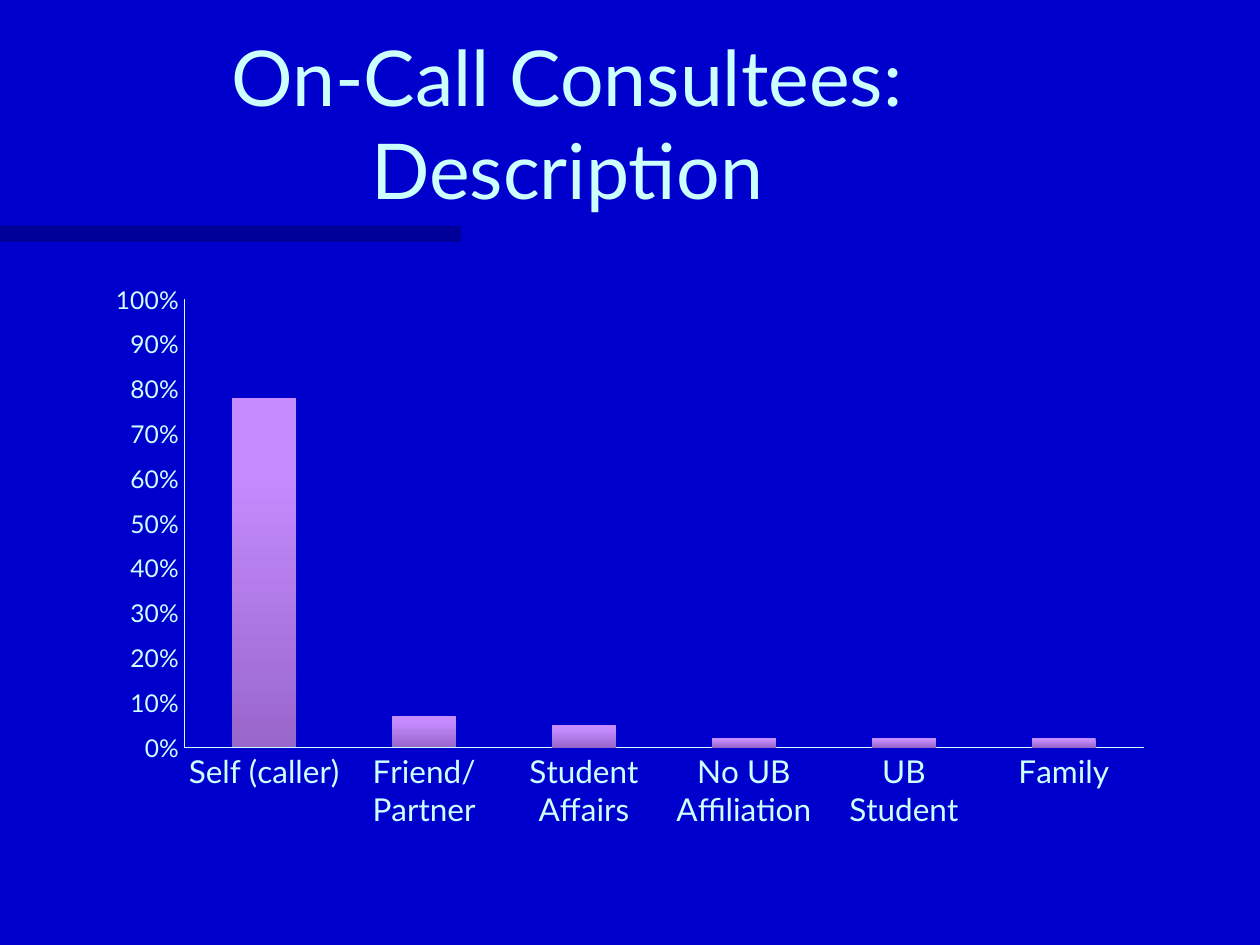
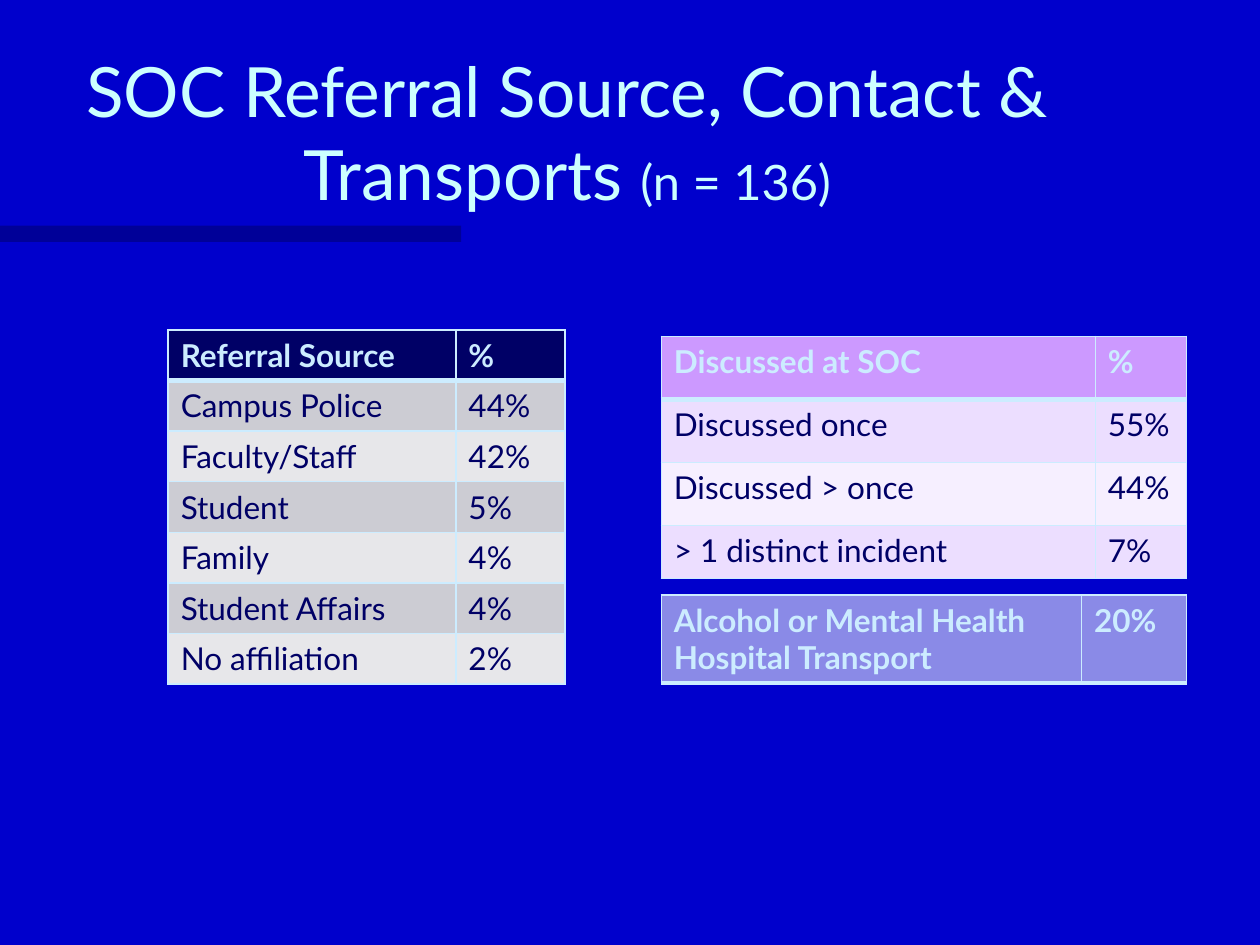
import pptx
import pptx.chart.data
import pptx.dml.color
import pptx.enum.chart
import pptx.enum.shapes
import pptx.enum.text
import pptx.oxml
import pptx.oxml.ns
import pptx.util
from lxml import etree

Cm, Pt = pptx.util.Cm, pptx.util.Pt
FONT = "Lato"
BLUE, NAVY, TITLE, PALE = "0000CC", "000066", "CCFFFF", "CCECFF"
TITLE_BOX = (0.64, 1.27, 21.59, 3.18)
BAND_BOX = (0, 4.55, 9.3, 0.33)


def rgb(value):
    """Turn a hex string into a colour."""
    return pptx.dml.color.RGBColor.from_string(value)


def style_font(font, size, color, bold=False):
    """Set face, size, colour and weight."""
    font.name, font.size, font.bold = FONT, Pt(size), bold
    font.color.rgb = rgb(color)


def add_run(p, text, size, color, bold=False):
    """Add one styled run to a paragraph."""
    r = p.add_run()
    r.text = text
    style_font(r.font, size, color, bold)


def add_base(prs, title_runs):
    """Add a slide with the shared band and its title."""
    s = prs.slides.add_slide(prs.slide_layouts[6])
    band = s.shapes.add_shape(pptx.enum.shapes.MSO_SHAPE.RECTANGLE, *map(Cm, BAND_BOX))
    band.shadow.inherit = False
    band.fill.solid()
    band.fill.fore_color.rgb = rgb(NAVY)
    band.line.fill.background()
    color = band.fill._xPr.find(".//" + pptx.oxml.ns.qn("a:srgbClr"))
    etree.SubElement(color, pptx.oxml.ns.qn("a:alpha"), val="50000")

    tf = s.shapes.add_textbox(*map(Cm, TITLE_BOX)).text_frame
    tf.word_wrap = True
    tf.vertical_anchor = pptx.enum.text.MSO_ANCHOR.BOTTOM
    p = tf.paragraphs[0]
    p.alignment = pptx.enum.text.PP_ALIGN.CENTER
    for text, size in title_runs:
        add_run(p, text, size, TITLE)
    return s


def set_plot_area(chart, **fractions):
    """Fix the inner plot area as fractions of the chart."""
    ns = pptx.oxml.ns.nsdecls("c")
    parts = "".join(f'<c:{k}Mode val="edge"/>' for k in "xy")
    parts += "".join(f'<c:{k} val="{v}"/>' for k, v in fractions.items())
    layout = pptx.oxml.parse_xml(
        f'<c:layout {ns}><c:manualLayout><c:layoutTarget val="inner"/>'
        f"{parts}</c:manualLayout></c:layout>")
    plot_area = chart._chartSpace.chart.plotArea
    for old in plot_area.findall(pptx.oxml.ns.qn("c:layout")):
        plot_area.remove(old)
    plot_area.insert(0, layout)


def add_column_chart(s, box, shares):
    """Draw shares as gradient columns on a percent scale."""
    data = pptx.chart.data.CategoryChartData(number_format="0%")
    data.categories = list(shares)
    data.add_series("Series 1", list(shares.values()))
    kind = pptx.enum.chart.XL_CHART_TYPE.COLUMN_CLUSTERED
    chart = s.shapes.add_chart(kind, *map(Cm, box), data).chart
    chart.has_legend = chart.has_title = False
    style_font(chart.font, 18, PALE)
    set_plot_area(chart, x=0.084, y=0.046, w=0.896, h=0.79)

    for axis, size in ((chart.category_axis, 18), (chart.value_axis, 14)):
        axis.has_major_gridlines = False
        axis.major_tick_mark = axis.minor_tick_mark = pptx.enum.chart.XL_TICK_MARK.NONE
        axis.format.line.color.rgb = rgb(TITLE)
        axis.format.line.width = Pt(0.75)
        style_font(axis.tick_labels.font, size, TITLE)
    axis = chart.value_axis
    axis.minimum_scale, axis.maximum_scale, axis.major_unit = 0, 1, 0.1
    axis.tick_labels.number_format = "0%"
    axis.tick_labels.number_format_is_linked = False

    plot = chart.plots[0]
    plot.gap_width = 150
    plot.vary_by_categories = False
    fill = plot.series[0].format.fill
    fill.gradient()
    fill.gradient_angle = 270
    for stop, (position, color) in zip(fill.gradient_stops, ((0.2, "C58CFF"), (1, "9966CC"))):
        stop.position = position
        stop.color.rgb = rgb(color)


def set_borders(cell, bottom):
    """Draw the four cell borders, with a given bottom width."""
    ns = pptx.oxml.ns.nsdecls("a")
    tc_pr = cell._tc.get_or_add_tcPr()
    for i, (side, width) in enumerate((("L", 1), ("R", 1), ("T", 1), ("B", bottom))):
        tc_pr.insert(i, pptx.oxml.parse_xml(
            f'<a:ln{side} {ns} w="{Pt(width)}"><a:solidFill>'
            f'<a:srgbClr val="{PALE}"/></a:solidFill></a:ln{side}>'))


def add_share_table(s, left, top, widths, heights, rows, head_fill, body_fills=()):
    """Add a table with a bold header row and alternating body rows."""
    box = (left, top, sum(widths), sum(heights))
    frame = s.shapes.add_table(len(rows), len(widths), *map(Cm, box))
    table = frame.table
    for column, width in zip(table.columns, widths):
        column.width = Cm(width)
    for i, (row, height) in enumerate(zip(rows, heights)):
        table.rows[i].height = Cm(height)
        head = i == 0
        for j, text in enumerate(row):
            cell = table.cell(i, j)
            cell.fill.solid()
            cell.fill.fore_color.rgb = rgb(head_fill if head else body_fills[(i - 1) % 2])
            set_borders(cell, 3 if head else 1)
            add_run(cell.text_frame.paragraphs[0], text, 18, PALE if head else NAVY, head)


def build_consultees(prs):
    """Build the slide on who consults the on-call service."""
    s = add_base(prs, [("On-Call Consultees: Description", 44)])
    add_column_chart(s, (1.9, 5.51, 21.59, 11.43), {
        "Self (caller)": 0.78, "Friend/Partner": 0.07, "Student Affairs": 0.05,
        "No UB Affiliation": 0.02, "UB Student": 0.02, "Family": 0.02})


def build_referrals(prs):
    """Build the slide on referral source, contact and transports."""
    s = add_base(prs, [("SOC Referral Source, Contact & Transports ", 39.6), ("(n = 136)", 27.9)])
    discussed = [("Discussed at SOC", "%"), ("Discussed once", "55%"),
                 ("Discussed > once", "44%"), ("> 1 distinct incident", "7%")]
    add_share_table(s, 13.33, 6.78, (8.75, 1.84), (1.27, 1.27, 1.27, 1.07),
                    discussed, "CC99FF", ("ECDEFF", "F6EFFF"))
    sources = [("Referral Source", "%"), ("Campus Police", "44%"), ("Faculty/Staff", "42%"),
               ("Student", "5%"), ("Family", "4%"), ("Student Affairs", "4%"),
               ("No affiliation", "2%")]
    add_share_table(s, 3.39, 6.65, (5.8, 2.2), [1.02] * len(sources),
                    sources, NAVY, ("CCCCD3", "E7E7EA"))
    transport = [("Alcohol or Mental Health Hospital Transport", "20%")]
    add_share_table(s, 13.33, 11.99, (8.47, 2.12), [1.78], transport, "8A8AE7")


def main():
    """Build and save the presentation."""
    prs = pptx.Presentation()
    prs.slide_width, prs.slide_height = Cm(25.4), Cm(19.05)
    fill = prs.slide_master.background.fill
    fill.solid()
    fill.fore_color.rgb = rgb(BLUE)
    build_consultees(prs)
    build_referrals(prs)
    prs.save("out.pptx")


if __name__ == "__main__":
    main()
